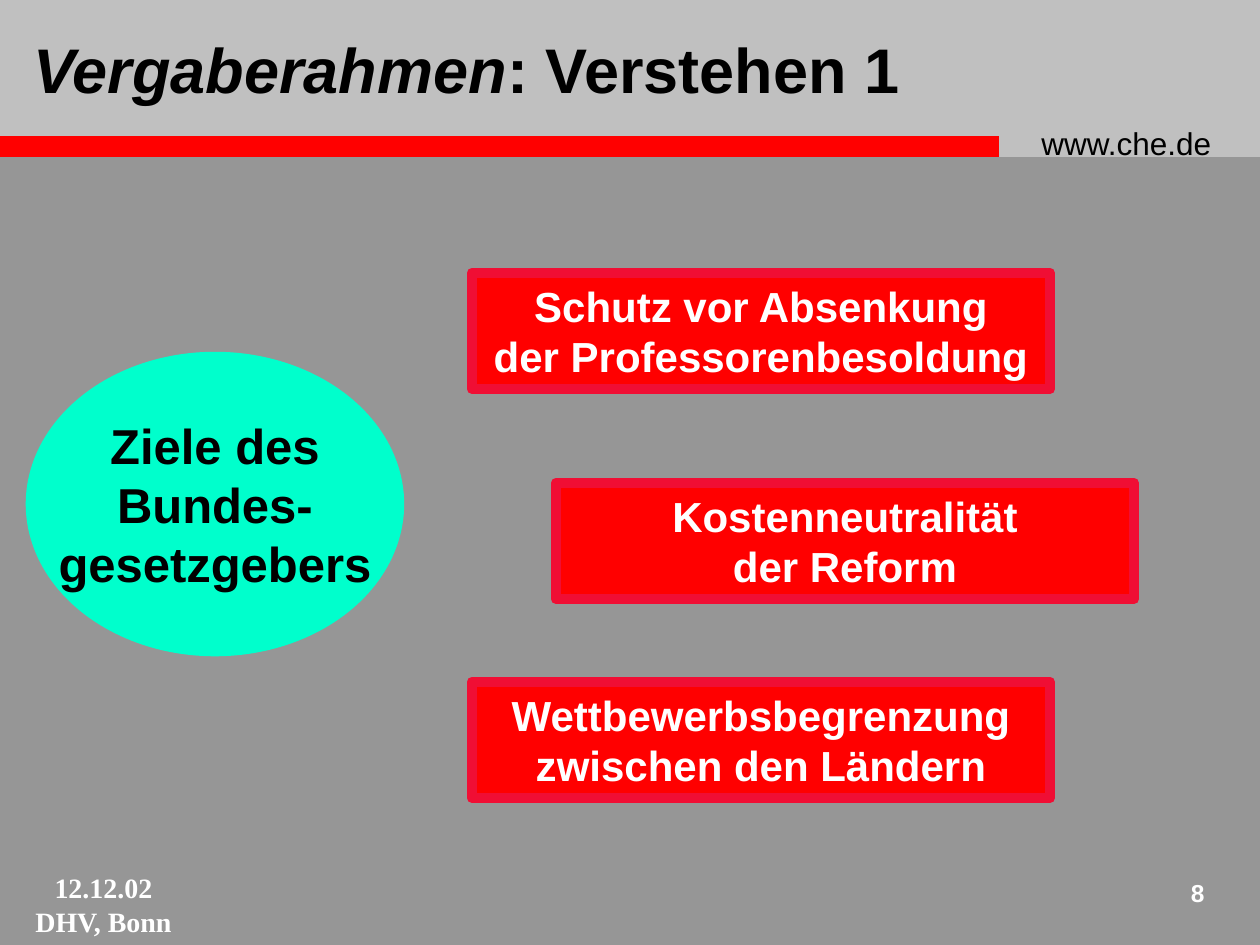
from pptx import Presentation
from pptx.dml.color import RGBColor
from pptx.enum.shapes import MSO_SHAPE
from pptx.enum.text import MSO_ANCHOR, PP_ALIGN
from pptx.util import Pt

EMU_PER_PX = 914400 / 126
WIDTH, HEIGHT = 1260, 945

BLACK = RGBColor(0x00, 0x00, 0x00)
WHITE = RGBColor(0xFF, 0xFF, 0xFF)
GREY = RGBColor(0x96, 0x96, 0x96)
SILVER = RGBColor(0xC0, 0xC0, 0xC0)
RED = RGBColor(0xFF, 0x00, 0x00)
CRIMSON = RGBColor(0xF0, 0x0E, 0x34)
AQUA = RGBColor(0x00, 0xFF, 0xCC)


def px(n):
    return round(n * EMU_PER_PX)


def add_block(s, kind, box, fill, line=None):
    sp = s.shapes.add_shape(kind, *map(px, box))
    sp.shadow.inherit = False
    sp.fill.solid()
    sp.fill.fore_color.rgb = fill
    if line is None:
        sp.line.fill.background()
    else:
        sp.line.color.rgb = line
        sp.line.width = Pt(6)
    return sp


def write(sp, lines, size, color, bold=True, align=PP_ALIGN.CENTER,
          anchor=MSO_ANCHOR.MIDDLE, font="Arial", wrap=False):
    """Put one paragraph per line into the shape; a line is a list of runs."""
    tf = sp.text_frame
    tf.word_wrap = wrap
    tf.vertical_anchor = anchor
    for i, runs in enumerate(lines):
        p = tf.add_paragraph() if i else tf.paragraphs[0]
        p.alignment = align
        for text in runs:
            r = p.add_run()
            r.text = text
            r.font.name = font
            r.font.size = Pt(size)
            r.font.bold = bold
            r.font.color.rgb = color
    return tf


def add_text(s, box, lines, size, color, **style):
    return write(s.shapes.add_textbox(*map(px, box)), lines, size, color, **style)


def add_header(s, x, y, w, h):
    add_block(s, MSO_SHAPE.RECTANGLE, (x, y, w, h), SILVER)
    add_block(s, MSO_SHAPE.RECTANGLE, (x, y + h - 21, 999, 21), RED)
    add_text(s, (x + 1029, y + 118, 221, 50), [["www.che.de"]], 18, BLACK,
             bold=False, align=PP_ALIGN.LEFT, anchor=MSO_ANCHOR.TOP, wrap=True)
    title = add_text(s, (x + 21, y, 1018, h - 21), [["Vergaberahmen", ": Verstehen 1"]],
                     36, BLACK, align=PP_ALIGN.LEFT, wrap=True)
    title.paragraphs[0].runs[0].font.italic = True


def add_goals(s, x, y):
    """Ellipse naming the topic, with the staggered goal boxes to its right."""
    topic = add_block(s, MSO_SHAPE.OVAL, (x, y + 84, 368, 294), AQUA, AQUA)
    write(topic, [["Ziele des"], ["Bundes-"], ["gesetzgebers"]], 28, BLACK)
    goals = [
        (441, 0, "Schutz vor Absenkung", "der Professorenbesoldung"),
        (525, 210, "Kostenneutralität", "der Reform"),
        (441, 409, "Wettbewerbsbegrenzung", "zwischen den Ländern"),
    ]
    for dx, dy, first, second in goals:
        goal = add_block(s, MSO_SHAPE.RECTANGLE, (x + dx, y + dy, 578, 116), RED, CRIMSON)
        write(goal, [[first], [second]], 24, WHITE)


def add_footer(s, x, y, w, h):
    add_text(s, (x, y, 165, h), [["12.12.02"], ["DHV, Bonn"]], 16, WHITE,
             font="Times New Roman")
    add_text(s, (x + w - 73, y + 8, 73, 53), [["8"]], 14, WHITE,
             align=PP_ALIGN.RIGHT, anchor=MSO_ANCHOR.TOP, wrap=True)


def main():
    prs = Presentation()
    prs.slide_width, prs.slide_height = px(WIDTH), px(HEIGHT)
    s = prs.slides.add_slide(prs.slide_layouts[6])
    s.background.fill.solid()
    s.background.fill.fore_color.rgb = GREY
    add_header(s, 0, 0, WIDTH, 157)
    add_footer(s, 21, 864, 1196, 81)
    add_goals(s, 31, 273)
    prs.save("out.pptx")


if __name__ == "__main__":
    main()
